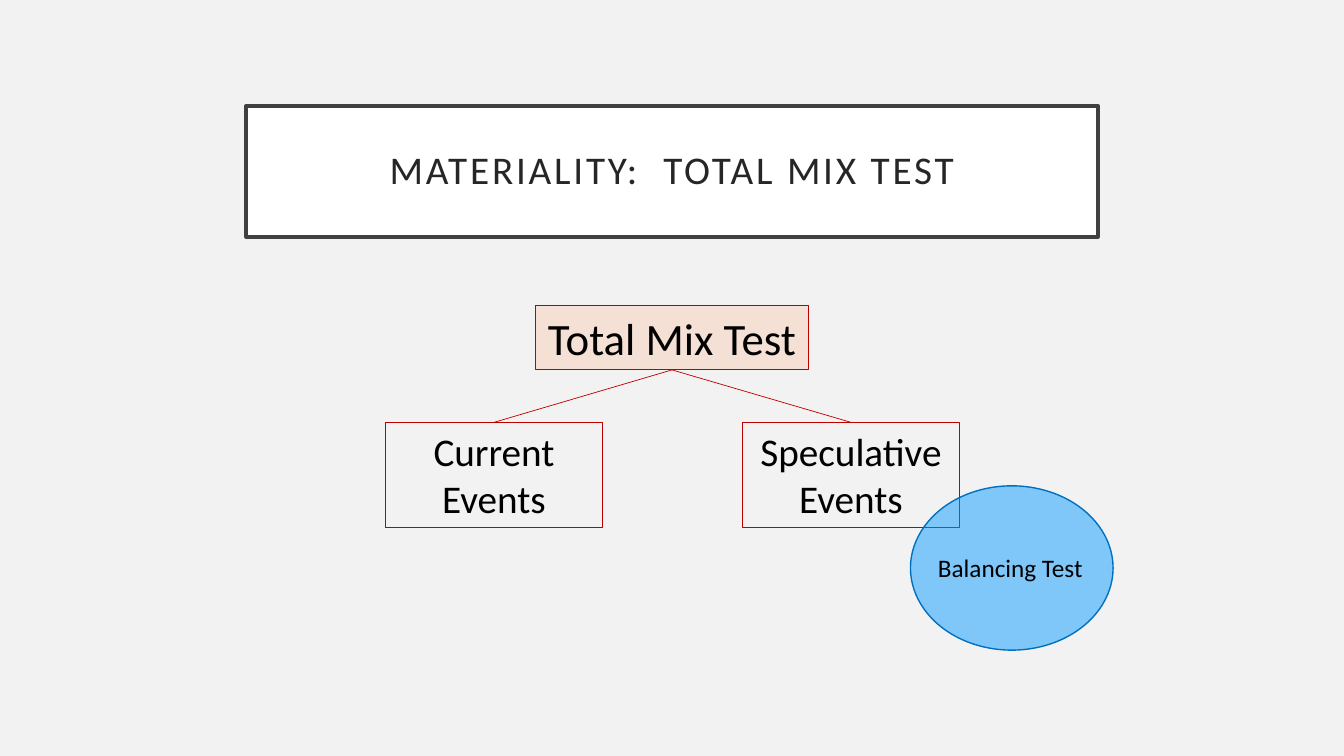
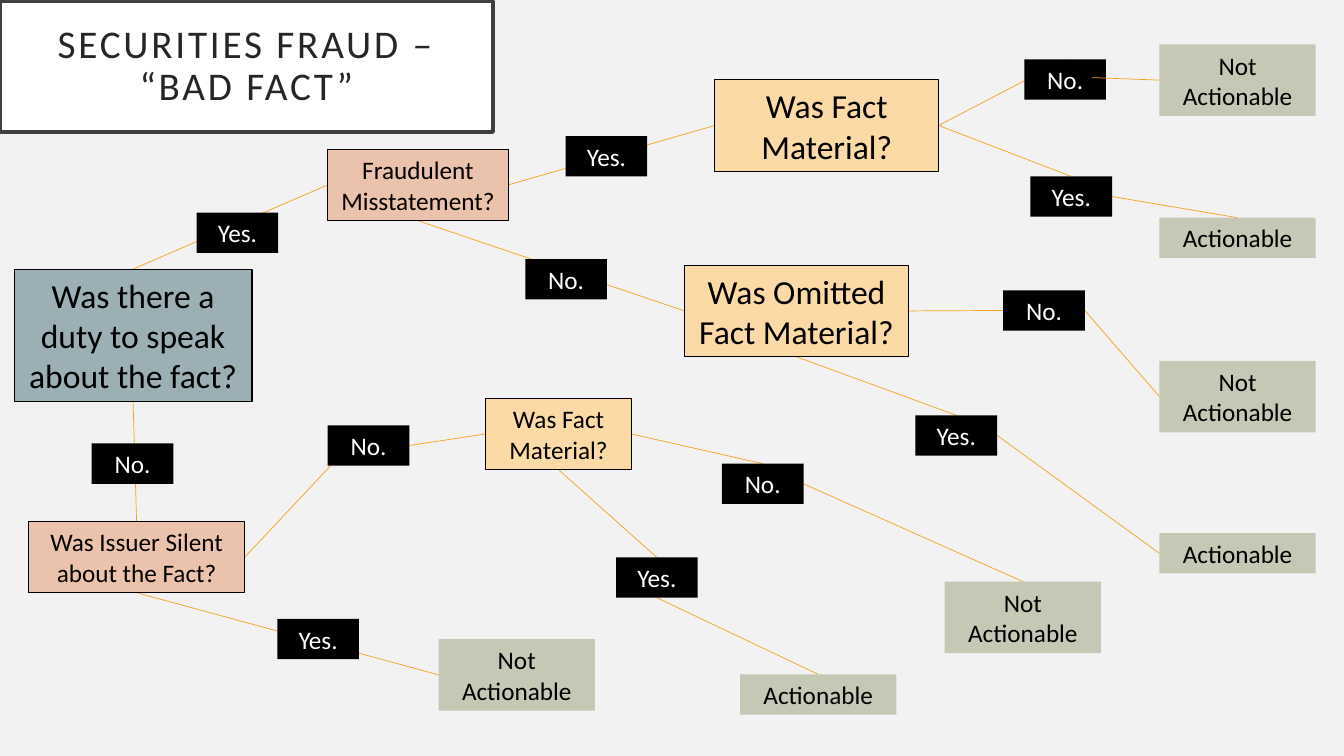
from lxml.etree import SubElement
from pptx import Presentation
from pptx.dml.color import RGBColor
from pptx.enum.shapes import MSO_CONNECTOR, MSO_SHAPE
from pptx.enum.text import MSO_ANCHOR, MSO_AUTO_SIZE, PP_ALIGN
from pptx.oxml.ns import qn
from pptx.util import Inches, Pt

COLORS = {
    "background": "F2F2F2", "white": "FFFFFF", "black": "000000",
    "title_text": "262626", "title_border": "404040",
    "red": "C00000", "peach": "F5E0D5", "sky": "0099FF", "blue": "0070C0",
    "duty": "9BAFB5", "conduct": "EBC2AB", "material": "FBDAA5",
    "outcome": "C4C8B5", "orange": "F6A21D",
}
FONT = "Calibri"
TOP, LEFT, BOTTOM, RIGHT = range(4)  # connection sites of a rectangle


def rgb(name):
    return RGBColor.from_string(COLORS[name])


class Deck:
    """Shared style plus the slide being filled."""

    def __init__(self):
        self.prs = Presentation()
        self.prs.slide_width, self.prs.slide_height = Inches(13.33), Inches(7.5)
        master_fill = self.prs.slide_master.background.fill
        master_fill.solid()
        master_fill.fore_color.rgb = rgb("background")
        self.slide = None

    def new_slide(self, title, left, top, width):
        self.slide = self.prs.slides.add_slide(self.prs.slide_layouts[5])
        heading = self.slide.shapes.title
        heading.left, heading.top = Inches(left), Inches(top)
        heading.width, heading.height = Inches(width), Inches(1.3)
        self.paint(heading, "white", "title_border", 2.5)
        self.set_text(heading, title, 28, "title_text", MSO_AUTO_SIZE.NONE)
        frame = heading.text_frame
        frame.vertical_anchor = MSO_ANCHOR.MIDDLE
        frame.margin_left = frame.margin_right = Inches(0.2)
        frame.margin_top = frame.margin_bottom = Inches(0.2)
        frame.paragraphs[0].line_spacing = 0.9
        for run_style in heading.element.iter(qn("a:rPr")):
            run_style.set("spc", "200")

    def paint(self, shape, fill, border, weight):
        if fill:
            shape.fill.solid()
            shape.fill.fore_color.rgb = rgb(fill)
        else:
            shape.fill.background()
        if border:
            shape.line.color.rgb = rgb(border)
            shape.line.width = Pt(weight)
        else:
            shape.line.fill.background()

    def set_text(self, shape, text, size, color="black",
                 fit=MSO_AUTO_SIZE.SHAPE_TO_FIT_TEXT):
        frame = shape.text_frame
        frame.text = text
        frame.word_wrap = True
        frame.auto_size = fit
        for paragraph in frame.paragraphs:
            paragraph.alignment = PP_ALIGN.CENTER
            for run in paragraph.runs:
                run.font.name, run.font.size = FONT, Pt(size)
                run.font.color.rgb = rgb(color)

    def shape(self, kind, box, fill, border=None, weight=0.75):
        shape = self.slide.shapes.add_shape(kind, *map(Inches, box))
        shape.shadow.inherit = False
        self.paint(shape, fill, border, weight)
        return shape

    def box(self, text, box, size, fill, border=None, color="black"):
        shape = self.shape(MSO_SHAPE.RECTANGLE, box, fill, border)
        self.set_text(shape, text, size, color)
        return shape

    def answer(self, text, left, top):
        return self.box(text, (left, top, 0.81, 0.4), 18, "black", color="white")

    def outcome(self, text, left, top):
        height = 0.71 if " " in text else 0.4
        return self.box(text, (left, top, 1.55, height), 18, "outcome")

    def bubble(self, box, fill, border, opacity):
        bubble = self.shape(MSO_SHAPE.OVAL, box, fill, border, 1)
        color = bubble.element.spPr.find(qn("a:solidFill"))[0]
        SubElement(color, qn("a:alpha")).set("val", str(opacity * 1000))

    def label(self, text, box, size):
        self.set_text(self.slide.shapes.add_textbox(*map(Inches, box)), text, size)

    def line(self, color, start=(0, 0), end=(0, 0)):
        line = self.slide.shapes.add_connector(
            MSO_CONNECTOR.STRAIGHT, *map(Inches, (*start, *end)))
        line.line.color.rgb = rgb(color)
        line.line.width = Pt(0.5)
        SubElement(line.element.spPr, qn("a:effectLst"))
        return line

    def link(self, color, source, source_site, target, target_site):
        """Join two boxes with a line that runs behind every box."""
        line = self.line(color)
        line.begin_connect(source, source_site)
        line.end_connect(target, target_site)
        line.element.getparent().insert(2, line.element)


def total_mix_slide(deck):
    deck.new_slide("MATERIALITY:  TOTAL MIX TEST", 2.44, 1.05, 8.45)
    total_mix = deck.box("Total Mix Test", (5.31, 3.03, 2.71, 0.64), 32, "peach", "red")
    for events, left in (("Current Events", 3.82), ("Speculative\nEvents", 7.36)):
        branch = deck.box(events, (left, 4.19, 2.16, 1.04), 28, None, "red")
        deck.link("red", total_mix, BOTTOM, branch, TOP)
    deck.bubble((9.03, 4.82, 2.01, 1.63), "sky", "blue", 48)
    deck.label("Balancing Test", (9.08, 5.43, 1.88, 0.4), 18)


def bad_fact_slide(deck):
    deck.new_slide("SECURITIES FRAUD – “BAD FACT”", 0, 0.01, 4.89)

    # Questions: text, box, size, fill
    questions = {
        "duty": ("Was there a duty to speak about the fact?",
                 (0.14, 2.67, 2.36, 1.31), 24, "duty"),
        "misstated": ("Fraudulent Misstatement?", (3.25, 1.48, 1.79, 0.71), 18, "conduct"),
        "silent": ("Was Issuer Silent about the Fact?",
                   (0.28, 5.17, 2.15, 0.71), 18, "conduct"),
        "stated": ("Was Fact Material?", (7.09, 0.79, 2.22, 0.91), 24, "material"),
        "omitted": ("Was Omitted Fact Material?", (6.79, 2.63, 2.22, 0.91), 24, "material"),
        "spoken": ("Was Fact Material?", (4.82, 3.95, 1.44, 0.71), 18, "material"),
    }
    # Answers, named after the question they follow
    answers = {
        "duty yes": (1.95, 2.11), "duty no": (0.91, 4.4),
        "misstated yes": (5.61, 1.35), "misstated no": (5.21, 2.57),
        "silent yes": (2.75, 6.14), "silent no": (3.25, 4.22),
        "stated yes": (10.22, 1.75), "stated no": (10.16, 0.59),
        "omitted yes": (9.08, 4.12), "omitted no": (9.95, 2.88),
        "spoken yes": (6.11, 5.53), "spoken no": (7.16, 4.6),
    }
    # Outcomes, named after the answer that leads to them
    outcomes = {
        "stated no end": ("Not Actionable", 11.5, 0.44),
        "stated yes end": ("Actionable", 11.5, 2.16),
        "omitted no end": ("Not Actionable", 11.5, 3.58),
        "omitted yes end": ("Actionable", 11.5, 5.29),
        "spoken no end": ("Not Actionable", 9.37, 5.77),
        "spoken yes end": ("Actionable", 7.34, 6.69),
        "silent yes end": ("Not Actionable", 4.35, 6.34),
    }
    nodes = {key: deck.box(*question, "black") for key, question in questions.items()}
    for key, place in answers.items():
        nodes[key] = deck.answer(key.split()[1].capitalize() + ".", *place)
    for key, outcome in outcomes.items():
        nodes[key] = deck.outcome(*outcome)

    # Paths through the tree
    links = (
        ("duty", TOP, "misstated", LEFT),
        ("duty", BOTTOM, "silent", TOP),
        ("misstated", RIGHT, "stated", LEFT),
        ("misstated", BOTTOM, "omitted", LEFT),
        ("silent", RIGHT, "silent no", TOP),
        ("silent no", RIGHT, "spoken", LEFT),
        ("silent", BOTTOM, "silent yes end", LEFT),
        ("stated", RIGHT, "stated no", TOP),
        ("stated", RIGHT, "stated yes", TOP),
        ("stated yes", RIGHT, "stated yes end", TOP),
        ("omitted", RIGHT, "omitted no", LEFT),
        ("omitted no", RIGHT, "omitted no end", LEFT),
        ("omitted", BOTTOM, "omitted yes", TOP),
        ("omitted yes", RIGHT, "omitted yes end", LEFT),
        ("spoken", RIGHT, "spoken no", TOP),
        ("spoken no", RIGHT, "spoken no end", TOP),
        ("spoken", BOTTOM, "spoken yes", TOP),
        ("spoken yes", BOTTOM, "spoken yes end", TOP),
    )
    for source, source_site, target, target_site in links:
        deck.link("orange", nodes[source], source_site, nodes[target], target_site)

    # This line starts on top of its answer
    deck.line("orange", start=(10.83, 0.77)).end_connect(nodes["stated no end"], LEFT)


def main():
    deck = Deck()
    total_mix_slide(deck)
    bad_fact_slide(deck)
    deck.prs.save("out.pptx")


if __name__ == "__main__":
    main()
